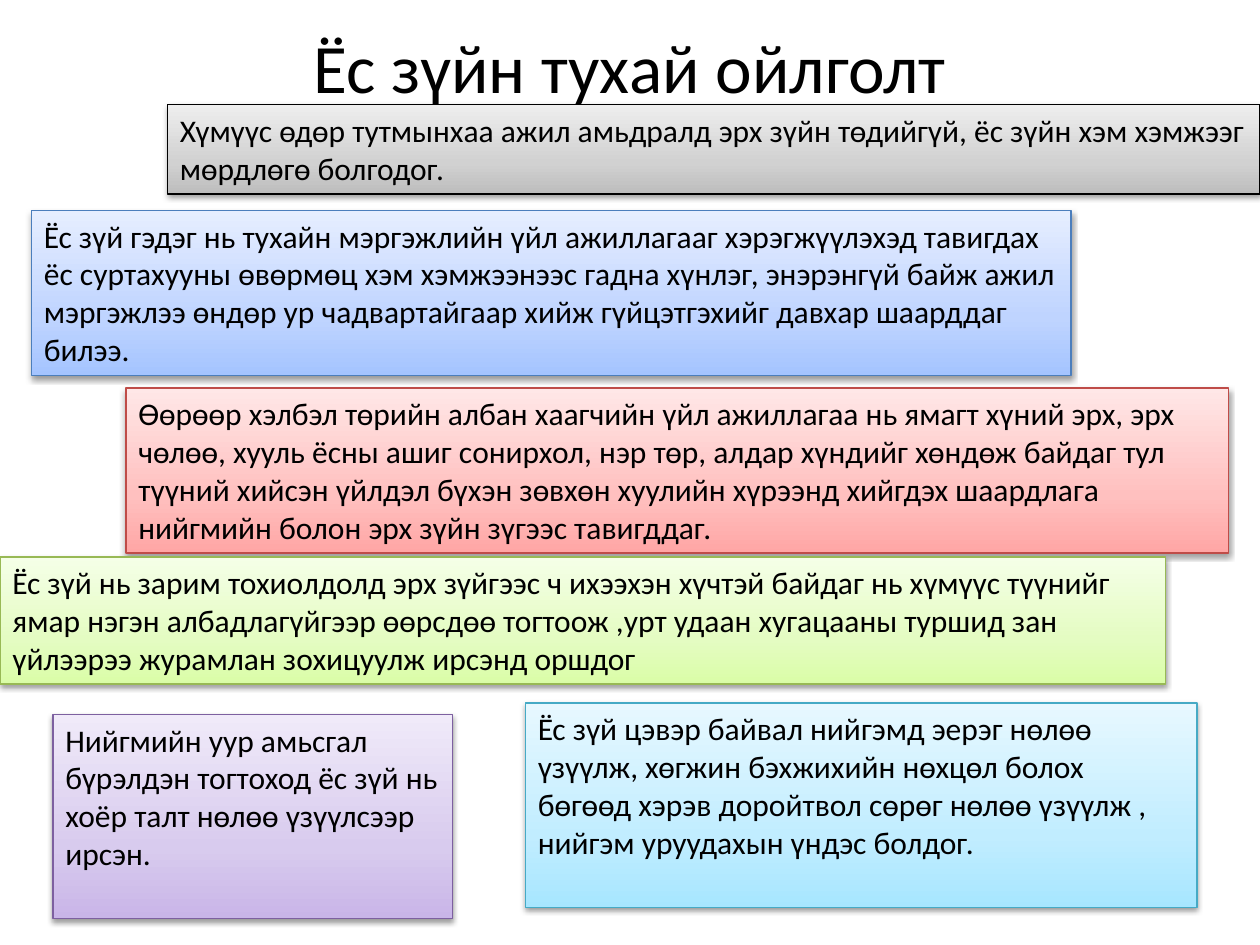
from copy import deepcopy
from lxml import etree
from pptx import Presentation
from pptx.dml.color import RGBColor
from pptx.enum.shapes import MSO_SHAPE
from pptx.enum.text import MSO_ANCHOR, MSO_AUTO_SIZE, PP_ALIGN
from pptx.oxml.ns import qn
from pptx.util import Inches, Pt

FRAME = {"word_wrap": True, "auto_size": MSO_AUTO_SIZE.NONE}
FONT = {"name": "Calibri"}
STOPS = (0, 0.35, 1)

# Box in inches, edge colour, gradient from bottom to top, wording
NOTES = [
    ((1.33, 0.83, 8.67, 0.71), "000000", ("BDBDBD", "D1D1D1", "EEEEEE"),
     "Хүмүүс өдөр тутмынхаа ажил амьдралд эрх зүйн төдийгүй, ёс зүйн хэм "
     "хэмжээг мөрдлөгө болгодог."),
    ((0.25, 1.67, 8.25, 1.31), "4B7EBC", ("A4C4FF", "BFD4FF", "E6EEFF"),
     "Ёс зүй гэдэг нь тухайн мэргэжлийн үйл ажиллагааг хэрэгжүүлэхэд тавигдах "
     "ёс суртахууны өвөрмөц хэм хэмжээнээс гадна хүнлэг, энэрэнгүй байж ажил "
     "мэргэжлээ өндөр ур чадвартайгаар хийж гүйцэтгэхийг давхар шаарддаг билээ."),
    ((1, 3.08, 8.75, 1.31), "BF4C48", ("FFA6A5", "FFC0BF", "FFE7E7"),
     "Өөрөөр хэлбэл төрийн албан хаагчийн үйл ажиллагаа нь ямагт хүний эрх, эрх "
     "чөлөө, хууль ёсны ашиг сонирхол, нэр төр, алдар хүндийг хөндөж байдаг тул "
     "түүний хийсэн үйлдэл бүхэн зөвхөн хуулийн хүрээнд хийгдэх шаардлага "
     "нийгмийн болон эрх зүйн зүгээс тавигддаг."),
    ((0, 4.42, 9.25, 1.01), "98B955", ("DAFDA7", "E4FCC2", "F5FFE7"),
     "Ёс зүй нь зарим тохиолдолд эрх зүйгээс ч ихээхэн хүчтэй байдаг нь хүмүүс "
     "түүнийг ямар нэгэн албадлагүйгээр өөрсдөө тогтоож ,урт удаан хугацааны "
     "туршид зан үйлээрээ журамлан зохицуулж ирсэнд оршдог"),
    ((0.42, 5.67, 3.17, 1.62), "7D60A0", ("C9B5E8", "D8CBEE", "F0EAF9"),
     "Нийгмийн уур амьсгал бүрэлдэн тогтоход ёс зүй нь хоёр талт нөлөө "
     "үзүүлсээр ирсэн."),
    ((4.17, 5.58, 5.33, 1.62), "46AAC5", ("A7E6FF", "C1EDFF", "E7F8FF"),
     "Ёс зүй цэвэр байвал нийгэмд эерэг нөлөө үзүүлж, хөгжин бэхжихийн нөхцөл "
     "болох бөгөөд хэрэв доройтвол сөрөг нөлөө үзүүлж , нийгэм уруудахын үндэс "
     "болдог."),
]


def tint(code):
    return RGBColor.from_string(code)


def apply(part, vals):
    for key, val in vals.items():
        setattr(part, key, val)


def write(shape, text, size, anchor, align):
    frame = shape.text_frame
    frame.text = text
    apply(frame, FRAME | {"vertical_anchor": anchor})
    par = frame.paragraphs[0]
    par.alignment = align
    apply(par.font, FONT | {"size": Pt(size)})
    par.font.color.rgb = tint("000000")


def shade(shape, codes):
    fill = shape.fill
    fill.gradient()
    fill.gradient_angle = 90
    # The default gradient has two stops; add the middle one
    stops = shape._element.spPr.find(f".//{qn('a:gsLst')}")
    stops.insert(1, deepcopy(stops[0]))
    for stop, place, code in zip(fill.gradient_stops, STOPS, codes):
        stop.position = place
        stop.color.rgb = tint(code)


def cast(shape):
    # Soft shadow straight below
    shape.shadow.inherit = False
    effect = shape._element.spPr.find(qn("a:effectLst"))
    outer = etree.SubElement(effect, qn("a:outerShdw"), blurRad=str(Pt(3.1)),
                             dist=str(Pt(1.6)), dir="5400000", rotWithShape="0")
    color = etree.SubElement(outer, qn("a:srgbClr"), val="000000")
    etree.SubElement(color, qn("a:alpha"), val="38000")


def add_title(slide, box, text):
    title = slide.shapes.title
    apply(title, dict(zip(("left", "top", "width", "height"), map(Inches, box))))
    write(title, text, 39.6, MSO_ANCHOR.MIDDLE, PP_ALIGN.CENTER)


def add_note(slide, box, edge, codes, text):
    note = slide.shapes.add_shape(MSO_SHAPE.RECTANGLE, *map(Inches, box))
    shade(note, codes)
    note.line.color.rgb = tint(edge)
    note.line.width = Pt(0.75)
    cast(note)
    write(note, text, 18, MSO_ANCHOR.TOP, PP_ALIGN.LEFT)


def main():
    deck = Presentation()
    apply(deck, {"slide_width": Inches(10), "slide_height": Inches(7.5)})
    slide = deck.slides.add_slide(deck.slide_layouts[5])
    add_title(slide, (0.5, 0.3, 9, 0.45), "Ёс зүйн тухай ойлголт")
    for note in NOTES:
        add_note(slide, *note)
    deck.save("out.pptx")


if __name__ == "__main__":
    main()
